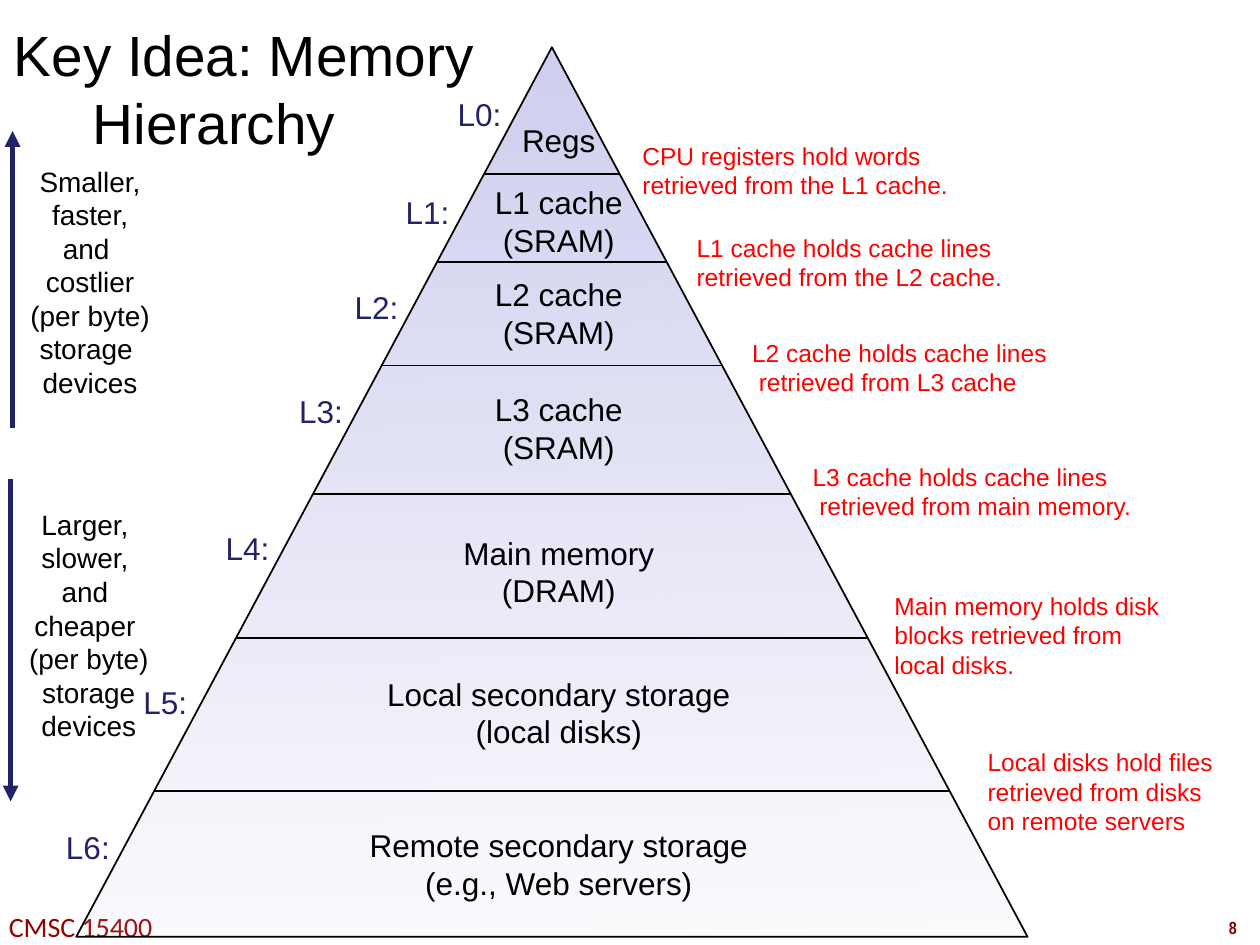
from typing import NamedTuple, Optional

import pptx
import pptx.dml.color
import pptx.enum.shapes
import pptx.enum.text
import pptx.oxml
import pptx.oxml.ns
import pptx.util

RGB = pptx.dml.color.RGBColor
ALIGN = pptx.enum.text.PP_ALIGN
BLACK = RGB(0x00, 0x00, 0x00)
NAVY = RGB(0x22, 0x22, 0x67)
RED = RGB(0xFF, 0x00, 0x00)
MAROON = RGB(0x80, 0x00, 0x00)
CRIMSON = RGB(0x99, 0x00, 0x00)
LAVENDER = RGB(0xCE, 0xCE, 0xEF)

# The slide is a grid of 100 columns by 75 rows; all positions are in these.
COLS, ROWS = 100, 75
WIDTH, HEIGHT = pptx.util.Inches(10), pptx.util.Inches(7.5)

APEX_COL, APEX_ROW = 43.8, 3.75
BASE_WIDTH, PYRAMID_HEIGHT = 75.5, 70.6
LEVEL_TEXT_COL = 44.35
LABEL_GAP = 2.9


class Style(NamedTuple):
    size: float
    color: RGB
    align: ALIGN = ALIGN.CENTER
    font: str = "Arial"
    bold: bool = False


class Note(NamedTuple):
    lines: list[str]
    left: float
    row: float
    width: float


class Level(NamedTuple):
    lines: list[str]
    width: float
    text_row: float
    label_row: float
    bottom: Optional[float] = None
    note: Optional[Note] = None


class Trend(NamedTuple):
    lines: list[str]
    text_col: float
    text_row: float
    arrow_col: float
    start_row: float
    end_row: float


TITLE = Style(32.4, BLACK, ALIGN.LEFT)
LEVEL = Style(18, BLACK)
LABEL = Style(18, NAVY)
NOTE = Style(14, RED, ALIGN.LEFT)
TREND = Style(16, BLACK)
COURSE = Style(16, CRIMSON, font="Calibri")
PAGE = Style(10, MAROON, font="Arial Narrow", bold=True)

LEVELS = [
    Level(["Regs"], 8, 11.1, 9.05, 13.8,
          Note(["CPU registers hold words retrieved from the L1 cache."], 50, 13.5, 31.9)),
    Level(["L1 cache", "(SRAM)"], 13, 17.55, 16.8, 20.8,
          Note(["L1 cache holds cache lines retrieved from the L2 cache."], 54.3, 20.8, 31)),
    Level(["L2 cache", "(SRAM)"], 13, 24.85, 24.35, 29,
          Note(["L2 cache holds cache lines", " retrieved from L3 cache"], 58.7, 29.15, 28.8)),
    Level(["L3 cache", "(SRAM)"], 13, 33.95, 32.6, 39.2,
          Note(["L3 cache holds cache lines", " retrieved from main memory."], 63.5, 39, 31.5)),
    Level(["Main memory", "(DRAM)"], 18, 45.35, 43.5, 50.65,
          Note(["Main memory holds disk blocks retrieved from local disks."], 70, 50.4, 23.9)),
    Level(["Local secondary storage", "(local disks)"], 31, 56.55, 55.7, 62.8,
          Note(["Local disks hold files retrieved from disks", "on remote servers"],
               77.4, 62.8, 22.6)),
    Level(["Remote secondary storage", "(e.g., Web servers)"], 34, 68.55, 67.2),
]

TRENDS = [
    Trend(["Smaller,", "faster,", "and ", "costlier", "(per byte)", "storage ", "devices"],
          7.15, 22.35, 1, 34, 10.4),
    Trend(["Larger, ", "slower, ", "and ", "cheaper ", "(per byte)", "storage", "devices"],
          7.05, 49.6, 0.85, 38, 63.6),
]


def x(col: float) -> int:
    return round(WIDTH * col / COLS)


def y(row: float) -> int:
    return round(HEIGHT * row / ROWS)


def half_width(row: float) -> float:
    """Columns from the pyramid's axis to its side at a row."""
    return BASE_WIDTH / 2 * (row - APEX_ROW) / PYRAMID_HEIGHT


def add_text(slide, lines: list[str], left: float, row: float, width: float,
             style: Style, wrap: bool = False):
    """Add a text box whose middle lies on the given row."""
    height = len(lines) * 3 + 1
    sp = slide.shapes.add_textbox(x(left), y(row - height / 2), x(width), y(height))
    tf = sp.text_frame
    tf.word_wrap = wrap
    tf.vertical_anchor = pptx.enum.text.MSO_ANCHOR.MIDDLE
    tf.text = "\n".join(lines)
    for p in tf.paragraphs:
        p.alignment = style.align
        p.font.size = pptx.util.Pt(style.size)
        p.font.name = style.font
        p.font.bold = style.bold
        p.font.color.rgb = style.color
    return sp


def add_centered(slide, lines: list[str], col: float, row: float, style: Style,
                 width: float) -> None:
    sp = add_text(slide, lines, col - width / 2, row, width, style)
    sp.text_frame.margin_left = sp.text_frame.margin_right = 0


def add_line(slide, start: tuple[float, float], end: tuple[float, float],
             color: RGB, weight: float, arrow: bool = False) -> None:
    line = slide.shapes.add_connector(
        pptx.enum.shapes.MSO_CONNECTOR.STRAIGHT,
        x(start[0]), y(start[1]), x(end[0]), y(end[1]))
    line.line.color.rgb = color
    line.line.width = pptx.util.Pt(weight)
    sp_pr = line._element.spPr
    if arrow:
        tail = pptx.oxml.parse_xml(
            f'<a:tailEnd {pptx.oxml.ns.nsdecls("a")} type="triangle"/>')
        sp_pr.find(pptx.oxml.ns.qn("a:ln")).append(tail)
    sp_pr.append(pptx.oxml.parse_xml(f'<a:effectLst {pptx.oxml.ns.nsdecls("a")}/>'))


def add_title(slide) -> None:
    """Add the two-line title with its second line indented."""
    sp = add_text(slide, ["Key Idea: Memory\vHierarchy"], 0.7, 7, 95.3, TITLE, wrap=True)
    tf = sp.text_frame
    tf.margin_left = tf.margin_right = x(0.4)
    p_pr = tf.paragraphs[0]._p.get_or_add_pPr()
    p_pr.set("marL", str(x(6.25)))
    p_pr.set("indent", str(-x(6.25)))


def add_pyramid(slide) -> None:
    """Add the triangle, fading towards its base."""
    sp = slide.shapes.add_shape(
        pptx.enum.shapes.MSO_SHAPE.ISOSCELES_TRIANGLE,
        x(APEX_COL - BASE_WIDTH / 2), y(APEX_ROW), x(BASE_WIDTH), y(PYRAMID_HEIGHT))
    sp.shadow.inherit = False
    sp.fill.gradient()
    sp.fill.gradient_angle = 91
    for stop, position in zip(sp.fill.gradient_stops, (0, 1)):
        stop.color.rgb = LAVENDER
        stop.position = position
    base_color = sp._element.spPr.find(".//" + pptx.oxml.ns.qn("a:srgbClr"))
    base_color.append(pptx.oxml.parse_xml(
        f'<a:alpha {pptx.oxml.ns.nsdecls("a")} val="7000"/>'))
    sp.line.color.rgb = BLACK
    sp.line.width = pptx.util.Pt(1)


def add_level(slide, number: int, level: Level) -> None:
    add_centered(slide, level.lines, LEVEL_TEXT_COL, level.text_row, LEVEL, level.width)
    label_col = APEX_COL - half_width(level.label_row) - LABEL_GAP
    add_centered(slide, [f"L{number}:"], label_col, level.label_row, LABEL, 5.8)
    if level.bottom is not None:
        half = half_width(level.bottom)
        add_line(slide, (APEX_COL - half, level.bottom), (APEX_COL + half, level.bottom),
                 BLACK, 1)
    if level.note:
        add_text(slide, *level.note, NOTE, wrap=True)


def add_trend(slide, trend: Trend) -> None:
    add_centered(slide, trend.lines, trend.text_col, trend.text_row, TREND, 11.6)
    add_line(slide, (trend.arrow_col, trend.start_row), (trend.arrow_col, trend.end_row),
             NAVY, 3, arrow=True)


def main() -> None:
    prs = pptx.Presentation()
    prs.slide_width, prs.slide_height = WIDTH, HEIGHT
    slide = prs.slides.add_slide(prs.slide_layouts[6])
    add_centered(slide, ["8"], 97.85, 73.65, PAGE, 3.4)
    add_centered(slide, ["CMSC 15400"], 6.4, 73.55, COURSE, 14.2)
    add_title(slide)
    add_pyramid(slide)
    for number, level in enumerate(LEVELS):
        add_level(slide, number, level)
    for trend in TRENDS:
        add_trend(slide, trend)
    prs.save("out.pptx")


if __name__ == "__main__":
    main()
